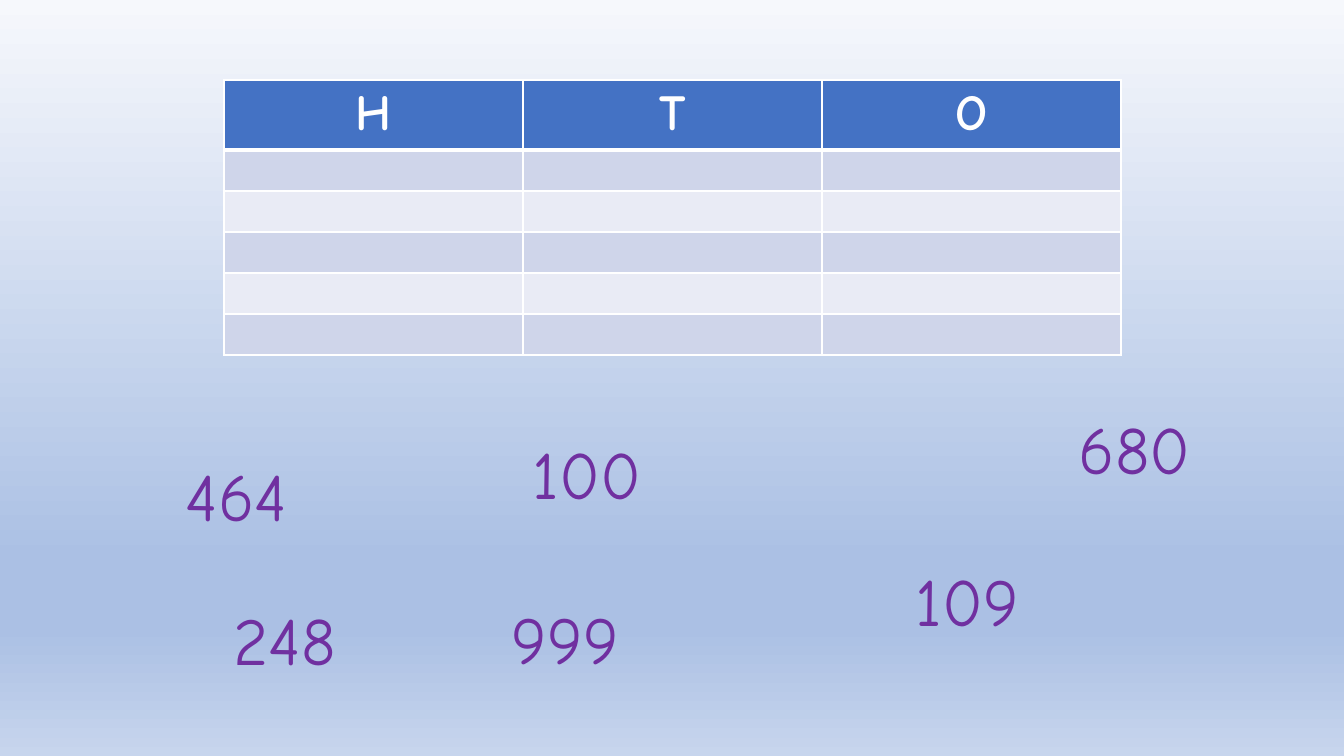
from copy import deepcopy

from lxml import etree
from pptx import Presentation
from pptx.dml.color import RGBColor
from pptx.enum.text import MSO_AUTO_SIZE, PP_ALIGN
from pptx.oxml.ns import qn
from pptx.util import Emu, Pt

CENTER = PP_ALIGN.CENTER
GROW = MSO_AUTO_SIZE.SHAPE_TO_FIT_TEXT

SLIDE_W, SLIDE_H = 1344, 756
EMU_PER_PX = 12192000 / SLIDE_W
BLANK_LAYOUT = 6

COLORS = {
    "header": "4472C4",
    "band_dark": "CFD5EA",
    "band_light": "E9EBF5",
    "white": "FFFFFF",
    "number": "7030A0",
}
SKY_STOPS = [(0, "F6F8FC"), (74, "ABC0E4"), (83, "ABC0E4"), (100, "C7D5ED")]

HEADER_FONT = {"name": "Comic Neue", "size": Pt(36), "bold": True}
NUMBER_FONT = {"name": "Comic Neue", "size": Pt(48)}

# Place value chart
PLACES = ["H", "T", "O"]
CHART_LEFT, CHART_TOP = 224, 80
COLUMN_W, HEADER_H, ROW_H = 299, 70, 41
ANSWER_ROWS = 5

# Numbers to sort: text, left, top
NUMBERS = [
    ("464", 176, 449),
    ("100", 523, 427),
    ("999", 502, 592),
    ("109", 906, 554),
    ("248", 224, 593),
    ("680", 1069, 402),
]
NUMBER_W, NUMBER_H = 200, 92


def px(length):
    return Emu(round(length * EMU_PER_PX))


def format_font(font, style, color):
    for attribute, value in style.items():
        setattr(font, attribute, value)
    font.color.rgb = RGBColor.from_string(COLORS[color])


def paint_background(slide):
    fill = slide.background.fill
    fill.gradient()
    fill.gradient_angle = 270
    stops = slide.background._cSld.find(".//" + qn("a:gsLst"))
    template = deepcopy(stops[0])
    for stop in list(stops):
        stops.remove(stop)
    for position, color in SKY_STOPS:
        stop = deepcopy(template)
        stop.set("pos", str(position * 1000))
        for old_color in list(stop):
            stop.remove(old_color)
        etree.SubElement(stop, qn("a:srgbClr"), val=color)
        stops.append(stop)


def draw_borders(cell, widths):
    properties = cell._tc.get_or_add_tcPr()
    for side, width in widths.items():
        line = etree.SubElement(properties, qn("a:ln" + side), w=str(Pt(width)))
        fill = etree.SubElement(line, qn("a:solidFill"))
        etree.SubElement(fill, qn("a:srgbClr"), val=COLORS["white"])


def style_cell(cell, row):
    # The rule between the header and the answer rows is thicker
    draw_borders(cell, {"L": 1, "R": 1,
                        "T": 3 if row == 1 else 1,
                        "B": 3 if row == 0 else 1})
    band = "header" if row == 0 else ("band_light", "band_dark")[row % 2]
    cell.fill.solid()
    cell.fill.fore_color.rgb = RGBColor.from_string(COLORS[band])


def add_place_value_chart(slide):
    chart = slide.shapes.add_table(
        ANSWER_ROWS + 1, len(PLACES), px(CHART_LEFT), px(CHART_TOP),
        px(COLUMN_W * len(PLACES)), px(HEADER_H + ROW_H * ANSWER_ROWS)).table
    for column in chart.columns:
        column.width = px(COLUMN_W)
    for index, row in enumerate(chart.rows):
        row.height = px(ROW_H if index else HEADER_H)
        for cell in row.cells:
            style_cell(cell, index)
    for cell, place in zip(chart.rows[0].cells, PLACES):
        heading = cell.text_frame.paragraphs[0]
        heading.alignment = CENTER
        run = heading.add_run()
        run.text = place
        format_font(run.font, HEADER_FONT, "white")


def add_number(slide, number, left, top):
    label = slide.shapes.add_textbox(px(left), px(top), px(NUMBER_W), px(NUMBER_H))
    frame = label.text_frame
    frame.word_wrap = True
    frame.auto_size = GROW
    run = frame.paragraphs[0].add_run()
    run.text = number
    format_font(run.font, NUMBER_FONT, "number")


def main():
    deck = Presentation()
    deck.slide_width, deck.slide_height = px(SLIDE_W), px(SLIDE_H)
    slide = deck.slides.add_slide(deck.slide_layouts[BLANK_LAYOUT])
    paint_background(slide)
    add_place_value_chart(slide)
    for number, left, top in NUMBERS:
        add_number(slide, number, left, top)
    deck.save("out.pptx")


if __name__ == "__main__":
    main()
